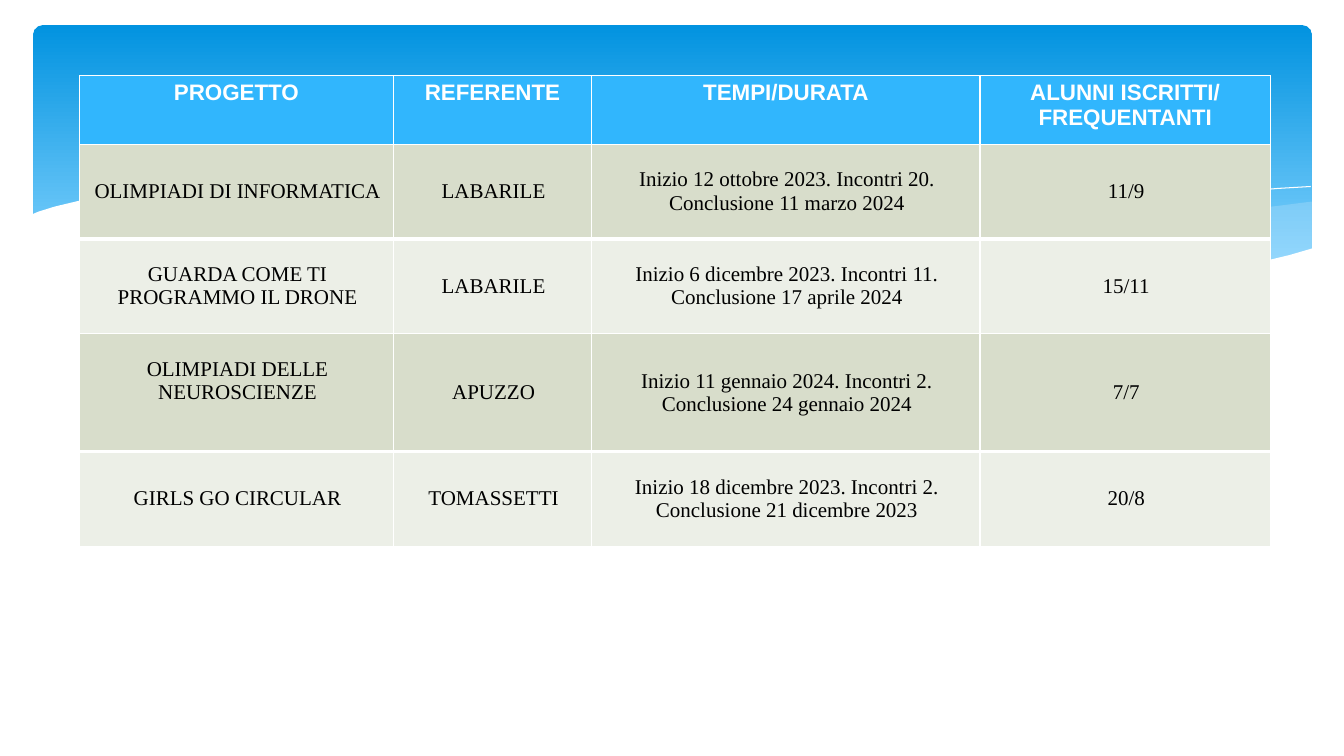
"""Build a slide with a table of school projects over a blue wave banner."""
from lxml.etree import SubElement
from pptx import Presentation
from pptx.dml.color import RGBColor
from pptx.enum.shapes import MSO_SHAPE as Shape
from pptx.enum.text import MSO_ANCHOR as Anchor, PP_ALIGN as Align
from pptx.oxml import parse_xml
from pptx.oxml.ns import nsdecls, qn
from pptx.util import Inches, Pt

WHITE = RGBColor(0xFF, 0xFF, 0xFF)
BLACK = RGBColor(0, 0, 0)
DEEP = RGBColor(0x02, 0x93, 0xE0)
LIGHT = RGBColor(0x83, 0xD3, 0xFE)
PALE = RGBColor(0xC6, 0xE7, 0xFC)
HEAD = RGBColor(0x31, 0xB6, 0xFD)
SAGE = RGBColor(0xD8, 0xDD, 0xCB)
MIST = RGBColor(0xEC, 0xEF, 0xE7)

ROWS = [
    ("PROGETTO", "REFERENTE", "TEMPI/DURATA", "ALUNNI ISCRITTI/\nFREQUENTANTI"),
    ("OLIMPIADI DI INFORMATICA", "LABARILE",
     "Inizio 12 ottobre 2023. Incontri 20. Conclusione 11 marzo 2024", "11/9"),
    ("GUARDA COME TI PROGRAMMO IL DRONE", "LABARILE",
     "Inizio 6 dicembre 2023. Incontri 11. Conclusione 17 aprile 2024", "15/11"),
    ("OLIMPIADI DELLE NEUROSCIENZE", "APUZZO",
     "Inizio 11 gennaio 2024. Incontri 2. Conclusione 24 gennaio 2024", "7/7"),
    ("GIRLS GO CIRCULAR", "TOMASSETTI",
     "Inizio 18 dicembre 2023. Incontri 2. Conclusione 21 dicembre 2023", "20/8"),
]
WIDTHS = [3.11, 1.97, 3.85, 2.88]
HEIGHTS = [0.68, 0.94, 0.94, 1.17, 0.94]
LEFT, TOP = 0.79, 0.75

RIGHT_WAVE = [
    (13.01, 2), (12.46, 2.07), (11.88, 2.16), (11.1, 2.3), (10.38, 2.42), (9.72, 2.53),
    (8.82, 2.65), (9.4, 2.71), (9.93, 2.75), (10.41, 2.77), (10.99, 2.77), (11.51, 2.75),
    (11.96, 2.7), (12.38, 2.63), (12.66, 2.57), (12.84, 2.52), (13.01, 2.47)]
MID_WAVE = [
    (11.9, 2.73), (11.16, 2.65), (10.34, 2.54), (9.41, 2.4), (8.39, 2.22), (7.78, 2.11),
    (7.21, 2.03), (6.52, 1.94), (5.89, 1.89), (5.32, 1.86), (4.82, 1.85), (4.37, 1.87),
    (3.82, 1.91), (4.56, 1.99), (5.39, 2.11), (5.99, 2.22), (7.06, 2.4), (8.02, 2.55),
    (8.87, 2.66), (9.63, 2.74), (10.3, 2.77), (10.9, 2.78), (11.43, 2.77)]
FALL = [
    (4.12, 1.95), (4.58, 1.9), (5.16, 1.87), (5.77, 1.87), (6.52, 1.9), (7.42, 1.97),
    (8.48, 2.08), (9.7, 2.26), (10.6, 2.41), (11.58, 2.61), (12.1, 2.72)]
RISE = [
    (8.18, 2.57), (8.96, 2.41), (9.61, 2.29), (10.35, 2.16), (11.15, 2.04), (11.75, 1.96),
    (12.32, 1.9), (12.67, 1.87), (13, 1.85)]
BASE = [
    (13.03, 2.46), (12.79, 2.53), (12.54, 2.59), (12.27, 2.65), (11.83, 2.71),
    (11.34, 2.75), (10.78, 2.77), (10.15, 2.75), (9.44, 2.7), (8.63, 2.62), (7.72, 2.5),
    (6.71, 2.33), (5.58, 2.13), (4.86, 2.02), (4.21, 1.94), (3.61, 1.88), (3.06, 1.85),
    (2.58, 1.84), (2.14, 1.84), (1.58, 1.87), (1.13, 1.93), (0.79, 1.99), (0.54, 2.05),
    (0.38, 2.1), (0.31, 2.13), (0.31, 3.29), (13.03, 3.29)]
WAVES = [(RIGHT_WAVE, PALE, 29), (MID_WAVE, PALE, 40), (FALL, None, 0),
         (RISE, None, 0), (BASE, WHITE, 100)]


def add_wave(slide, points, color, alpha):
    dots = [(Inches(x), Inches(y)) for x, y in points]
    pen = slide.shapes.build_freeform(*dots[0])
    pen.add_line_segments(dots[1:], close=color is not None)
    wave = pen.convert_to_shape()
    wave.shadow.inherit = False
    if color is None:
        wave.fill.background()
        wave.line.color.rgb = WHITE
        wave.line.width = Pt(0)
        return
    wave.line.fill.background()
    wave.fill.solid()
    wave.fill.fore_color.rgb = color
    if alpha < 100:
        tint = wave.fill._xPr.find(qn("a:solidFill"))[0]
        SubElement(tint, qn("a:alpha")).set("val", str(alpha * 1000))


def add_banner(slide):
    box = [Inches(n) for n in (0.33, 0.25, 12.68, 2.7)]
    banner = slide.shapes.add_shape(Shape.ROUNDED_RECTANGLE, *box)
    banner.adjustments[0] = 0.034
    banner.shadow.inherit = False
    banner.line.fill.background()
    banner.fill.gradient()
    banner.fill.gradient_angle = 270
    for stop, color, place in zip(banner.fill.gradient_stops, (DEEP, LIGHT), (0, 0.9)):
        stop.color.rgb = color
        stop.position = place


def set_edges(cell, row):
    top = 3 if row and row % 2 == 0 else 1
    base = 3 if row % 2 else 1
    props = cell._tc.get_or_add_tcPr()
    for i, (side, size) in enumerate(zip("LRTB", (1, 1, top, base))):
        props.insert(i, parse_xml(
            f'<a:ln{side} {nsdecls("a")} w="{Pt(size)}"><a:solidFill>'
            f'<a:srgbClr val="{WHITE}"/></a:solidFill></a:ln{side}>'))


def style_cell(cell, row, text):
    head = row == 0
    cell.text_frame.text = text
    cell.fill.solid()
    cell.fill.fore_color.rgb = HEAD if head else SAGE if row % 2 else MIST
    set_edges(cell, row)
    cell.vertical_anchor = Anchor.TOP if head else Anchor.MIDDLE
    cell.margin_left = Inches(0.1 if head else 0.04)
    cell.margin_right = Inches(0.1 if head else 0.02)
    cell.margin_top = cell.margin_bottom = Inches(0.05 if head else 0.01)
    for line in cell.text_frame.paragraphs:
        line.alignment = Align.CENTER
        for run in line.runs:
            run.font.name = "Arial" if head else "Times New Roman"
            run.font.size = Pt(16 if head else 15)
            run.font.bold = head
            run.font.color.rgb = WHITE if head else BLACK


def add_grid(slide):
    box = [Inches(n) for n in (LEFT, TOP, sum(WIDTHS), sum(HEIGHTS))]
    grid = slide.shapes.add_table(len(ROWS), len(WIDTHS), *box).table
    for col, width in zip(grid.columns, WIDTHS):
        col.width = Inches(width)
    for r, (texts, height) in enumerate(zip(ROWS, HEIGHTS)):
        grid.rows[r].height = Inches(height)
        for c, text in enumerate(texts):
            style_cell(grid.cell(r, c), r, text)
    grid.cell(3, 0).margin_bottom = Inches(0.24)


def main():
    deck = Presentation()
    deck.slide_width, deck.slide_height = Inches(13.33), Inches(7.5)
    slide = deck.slides.add_slide(deck.slide_layouts[6])
    add_banner(slide)
    for wave in WAVES:
        add_wave(slide, *wave)
    add_grid(slide)
    deck.save("out.pptx")


if __name__ == "__main__":
    main()
